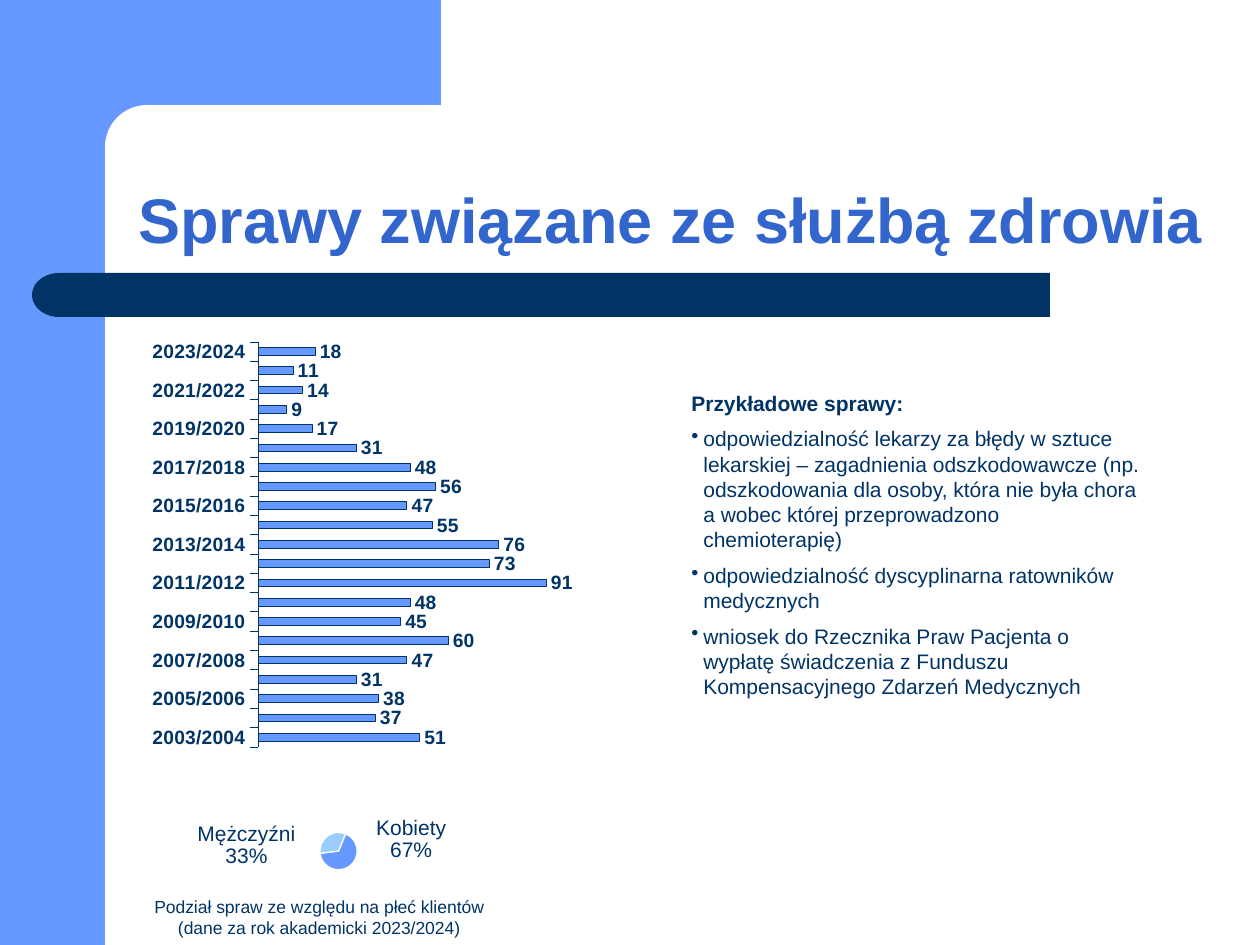
from lxml import etree
from pptx import Presentation
from pptx.chart.data import CategoryChartData
from pptx.dml.color import RGBColor
from pptx.enum.chart import XL_CHART_TYPE, XL_LABEL_POSITION, XL_TICK_MARK
from pptx.enum.shapes import MSO_SHAPE
from pptx.enum.text import MSO_ANCHOR, PP_ALIGN
from pptx.oxml.ns import qn
from pptx.util import Emu, Pt

RECT, ROUND = MSO_SHAPE.RECTANGLE, MSO_SHAPE.ROUNDED_RECTANGLE
DELAY = MSO_SHAPE.FLOWCHART_DELAY
BAR, PIE = XL_CHART_TYPE.BAR_CLUSTERED, XL_CHART_TYPE.PIE
OUTSIDE_END = XL_LABEL_POSITION.OUTSIDE_END
TICK_OUT, TICK_NONE = XL_TICK_MARK.OUTSIDE, XL_TICK_MARK.NONE
BOTTOM, TOP = MSO_ANCHOR.BOTTOM, MSO_ANCHOR.TOP
CENTER, LEFT = PP_ALIGN.CENTER, PP_ALIGN.LEFT

COLORS = {"blue": "6699FF", "light": "99CCFF", "navy": "003366",
          "title": "3366CC", "white": "FFFFFF"}
FONT = "Arial"
PX_PER_INCH = 126

CASES = [51, 37, 38, 31, 47, 60, 45, 48, 91, 73, 76, 55, 47, 56, 48, 31, 17,
         9, 14, 11, 18]
YEARS = [f"{year}/{year + 1}" for year in range(2003, 2003 + len(CASES))]
GENDER = {"Kobiety": 67, "Mężczyźni": 33}
EXAMPLES = [
    "odpowiedzialność lekarzy za błędy w sztuce lekarskiej – zagadnienia "
    "odszkodowawcze (np. odszkodowania dla osoby, która nie była chora a wobec "
    "której przeprowadzono chemioterapię)",
    "odpowiedzialność dyscyplinarna ratowników medycznych",
    "wniosek do Rzecznika Praw Pacjenta o wypłatę świadczenia z Funduszu "
    "Kompensacyjnego Zdarzeń Medycznych",
]


def px(n):
    return Emu(round(n * 914400 / PX_PER_INCH))


def box(*lengths):
    return [px(n) for n in lengths]


def rgb(name):
    return RGBColor.from_string(COLORS[name])


def style_font(font, size, color="navy", bold=False):
    for key, value in {"name": FONT, "size": Pt(size), "bold": bold}.items():
        setattr(font, key, value)
    font.color.rgb = rgb(color)


def paint(fmt, fill, line, width):
    fmt.fill.solid()
    fmt.fill.fore_color.rgb = rgb(fill)
    fmt.line.color.rgb = rgb(line)
    fmt.line.width = Pt(width)


def add_block(s, kind, at, color, adj=None, rotation=0):
    sp = s.shapes.add_shape(kind, *box(*at))
    sp.shadow.inherit = False
    sp.fill.solid()
    sp.fill.fore_color.rgb = rgb(color)
    sp.line.fill.background()
    sp.rotation = rotation
    if adj is not None:
        sp.adjustments[0] = adj


def add_bullet(p):
    pPr = p._p.get_or_add_pPr()
    pPr.set("marL", str(px(12)))
    pPr.set("indent", str(-px(12)))
    etree.SubElement(pPr, qn("a:buChar")).set("char", "•")


def add_text(s, at, items, size, color="navy", align=LEFT, anchor=TOP, spacing=None):
    """Each item is (text, bold, bulleted)."""
    tf = s.shapes.add_textbox(*box(*at)).text_frame
    tf.word_wrap = True
    tf.vertical_anchor = anchor
    for i, (text, bold, bulleted) in enumerate(items):
        p = tf.add_paragraph() if i else tf.paragraphs[0]
        p.alignment = align
        p.line_spacing = spacing
        if i:
            p.space_before = Pt(size / 2)
        if bulleted:
            add_bullet(p)
        r = p.add_run()
        r.text = text
        style_font(r.font, size, color, bold)


def manual_layout(**values):
    layout = etree.Element(qn("c:layout"))
    manual = etree.SubElement(layout, qn("c:manualLayout"))
    for key, value in values.items():
        etree.SubElement(manual, qn(f"c:{key}")).set("val", str(value))
    return layout


def add_chart(s, kind, at, cats, vals, plot_box):
    data = CategoryChartData()
    data.categories = cats
    data.add_series("Series 1", vals)
    chart = s.shapes.add_chart(kind, *box(*at), data).chart
    chart.has_title = chart.has_legend = False
    style_font(chart.font, 12)
    area = chart._chartSpace.chart.plotArea
    for old in area.findall(qn("c:layout")):
        area.remove(old)
    x, y, w, h = plot_box
    area.insert(0, manual_layout(layoutTarget="inner", xMode="edge", yMode="edge",
                                 x=x, y=y, w=w, h=h))
    chart.plots[0].vary_by_categories = kind == PIE
    return chart


def add_case_chart(s):
    chart = add_chart(s, BAR, (105, 304, 546, 471), YEARS, CASES,
                      (0.28, 0.08, 0.58, 0.86))
    plot = chart.plots[0]
    plot.gap_width = 150
    paint(plot.series[0].format, "blue", "navy", 0.25)

    values = chart.value_axis
    values.minimum_scale, values.maximum_scale = 0, 100
    values.has_major_gridlines = values.visible = False

    years = chart.category_axis
    years.major_tick_mark, years.minor_tick_mark = TICK_OUT, TICK_NONE
    years.format.line.color.rgb = rgb("navy")
    years.format.line.width = Pt(0.15)
    style_font(years.tick_labels.font, 11, bold=True)

    labels = plot.series[0].data_labels
    labels.show_value = True
    labels.position = OUTSIDE_END
    style_font(labels.font, 11, bold=True)


def add_gender_chart(s):
    chart = add_chart(s, PIE, (52, 770, 546, 149), list(GENDER), list(GENDER.values()),
                      (0.49, 0.42, 0.07, 0.25))
    plot = chart.plots[0]
    series = plot.series[0]
    pie = plot._element
    angle = pie.find(qn("c:firstSliceAng"))
    if angle is None:
        angle = etree.SubElement(pie, qn("c:firstSliceAng"))
    angle.set("val", "22")

    labels = series.data_labels
    labels.show_value = False
    labels.show_percentage = labels.show_category_name = True
    style_font(labels.font, 12)
    for i, color in enumerate(("blue", "light")):
        point = series.points[i]
        paint(point.format, color, "white", 0.75)
        style_font(point.data_label.font, 12)
        point.data_label.position = OUTSIDE_END

    # Label offsets from the default place, as shares of the chart
    offsets = [(0.04, -0.37), (-0.05, 0.25)]
    for label, (x, y) in zip(series._element.iter(qn("c:dLbl")), offsets):
        label.insert(1, manual_layout(x=x, y=y))
        for flag, on in {"showVal": 0, "showCatName": 1, "showPercent": 1}.items():
            label.find(qn(f"c:{flag}")).set("val", str(on))
        etree.SubElement(label, qn("c:separator")).text = "\n"
    for leader in series._element.iter(qn("c:showLeaderLines")):
        leader.set("val", "0")


def main():
    prs = Presentation()
    prs.slide_width, prs.slide_height = box(1260, 945)
    s = prs.slides.add_slide(prs.slide_layouts[6])

    # Corner frame and title bar
    add_block(s, RECT, (0, 0, 105, 945), "blue")
    add_block(s, RECT, (94, 0, 347, 147), "blue")
    add_block(s, ROUND, (105, 105, 703, 84), "white", adj=0.5)
    add_block(s, ROUND, (84, 273, 966, 44), "navy", adj=0)
    add_block(s, DELAY, (32, 273, 54, 44), "navy", rotation=180)

    # Title and example cases
    add_text(s, (126, 105, 1102, 158), [("Sprawy związane ze służbą zdrowia", True, False)],
             36, "title", anchor=BOTTOM, spacing=0.9)
    add_text(s, (679, 384, 476, 331), [("Przykładowe sprawy:", True, False)]
             + [(text, False, True) for text in EXAMPLES], 12)

    # Charts and caption
    add_case_chart(s)
    add_gender_chart(s)
    add_text(s, (123, 890, 392, 55),
             [("Podział spraw ze względu na płeć klientów "
               "(dane za rok akademicki 2023/2024)", False, False)], 10, align=CENTER)
    prs.save("out.pptx")


if __name__ == "__main__":
    main()
